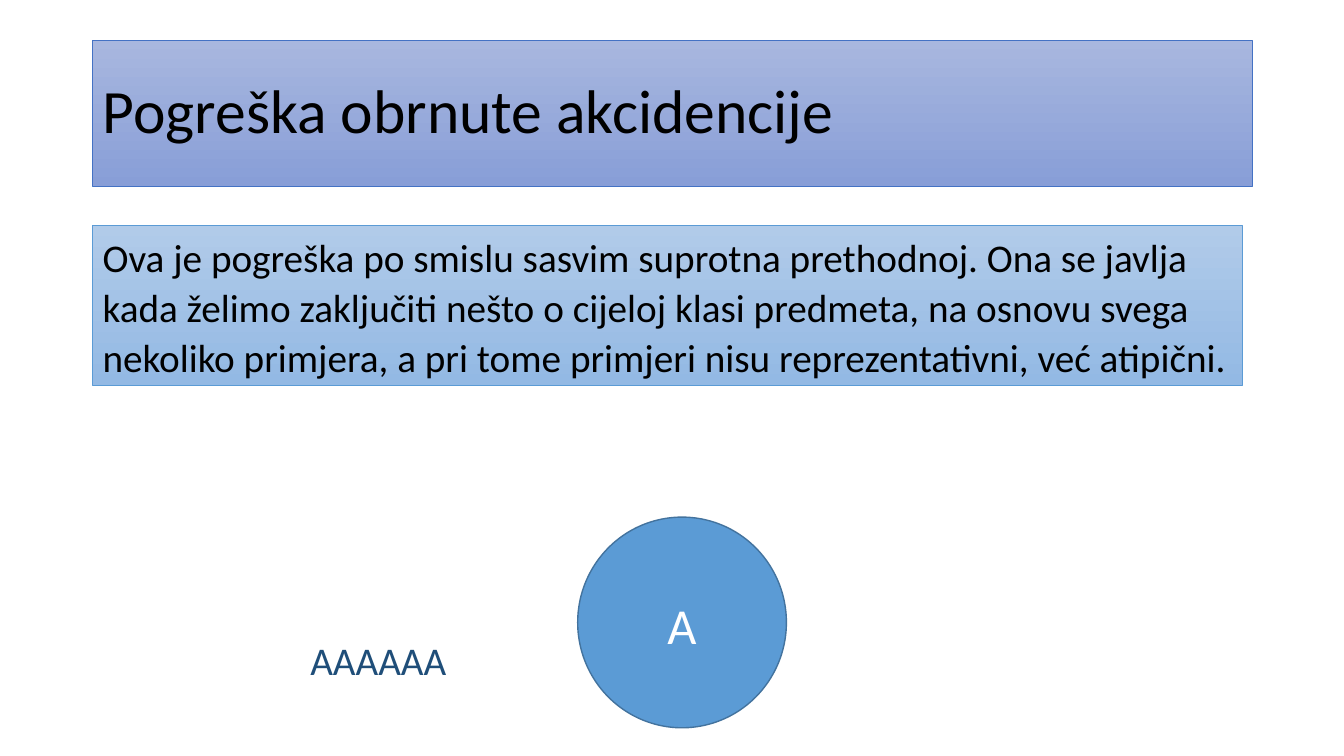
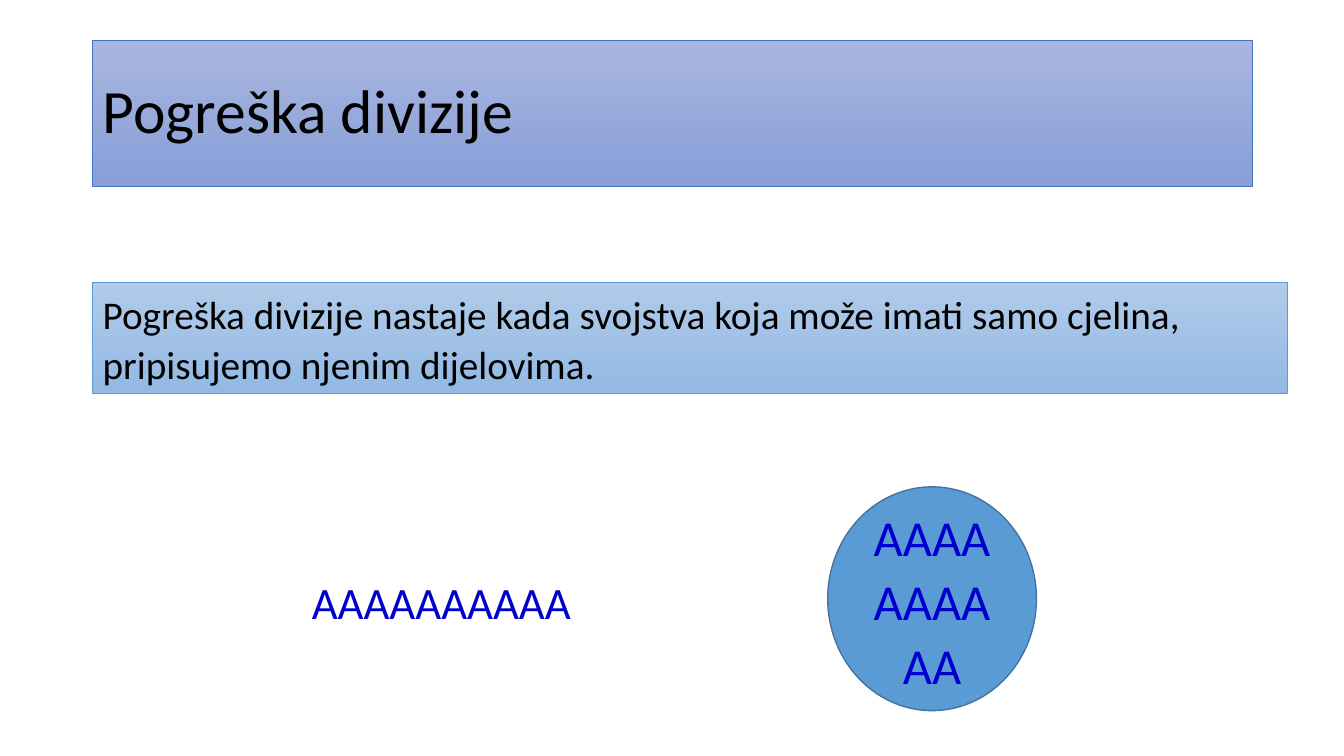
from pptx import Presentation
from pptx.dml.color import RGBColor as RGB
from pptx.enum.shapes import MSO_SHAPE as Shape
from pptx.enum.text import MSO_ANCHOR as Anchor, MSO_AUTO_SIZE as Auto, PP_ALIGN as Align
from pptx.util import Inches, Pt

FONT = "Calibri"
BLACK = RGB(0x00, 0x00, 0x00)
WHITE = RGB(0xFF, 0xFF, 0xFF)
NAVY = RGB(0x1F, 0x4E, 0x79)
INK = RGB(0x00, 0x00, 0xCC)
BLUE = RGB(0x5B, 0x9B, 0xD5)
EDGE = RGB(0x43, 0x73, 0x9E)
TITLE_EDGE = RGB(0x44, 0x72, 0xC4)
TITLE_FADE = RGB(0xA8, 0xB7, 0xDF), RGB(0x88, 0x9E, 0xD7)
BODY_FADE = RGB(0xB1, 0xCB, 0xE9), RGB(0x93, 0xB9, 0xE4)
LEFT = 0.92


def place(shape, left, top, width, height):
    shape.left, shape.top = Inches(left), Inches(top)
    shape.width, shape.height = Inches(width), Inches(height)


def outline(shape, color, width):
    shape.line.color.rgb = color
    shape.line.width = Pt(width)


def fade(shape, colors, edge):
    shape.fill.gradient()
    shape.fill.gradient_angle = 270
    for stop, color in zip(shape.fill.gradient_stops, colors):
        stop.color.rgb = color
    outline(shape, edge, 0.5)


def write(shape, text, size, color, align=Align.LEFT, anchor=Anchor.TOP,
          spacing=1.06, wrap=True):
    frame = shape.text_frame
    frame.text = text
    frame.word_wrap = wrap
    frame.auto_size = Auto.NONE
    frame.vertical_anchor = anchor
    para = frame.paragraphs[0]
    para.alignment = align
    para.line_spacing = spacing
    para.font.name = FONT
    para.font.size = Pt(size)
    para.font.color.rgb = color


def add_page(deck, text):
    slide = deck.slides.add_slide(deck.slide_layouts[5])
    title = slide.shapes.title
    place(title, LEFT, 0.4, 11.5, 1.45)
    fade(title, TITLE_FADE, TITLE_EDGE)
    write(title, text, 44, BLACK, anchor=Anchor.MIDDLE, spacing=0.9)
    return slide


def add_form(slide, kind, box):
    shape = slide.shapes.add_shape(kind, *map(Inches, box))
    shape.shadow.inherit = False
    return shape


def add_body(slide, text, top, width, height):
    body = add_form(slide, Shape.RECTANGLE, (LEFT, top, width, height))
    fade(body, BODY_FADE, BLUE)
    write(body, text, 28, BLACK)


def add_disc(slide, text, box, color):
    disc = add_form(slide, Shape.OVAL, box)
    disc.fill.solid()
    disc.fill.fore_color.rgb = BLUE
    outline(disc, EDGE, 1)
    write(disc, text, 36, color, Align.CENTER, Anchor.MIDDLE)


def add_label(slide, text, box, size, color, **style):
    label = slide.shapes.add_textbox(*map(Inches, box))
    write(label, text, size, color, **style)


def main():
    deck = Presentation()
    deck.slide_width, deck.slide_height = Inches(13.33), Inches(7.5)

    slide = add_page(deck, "Pogreška obrnute akcidencije")
    add_body(slide, "Ova je pogreška po smislu sasvim suprotna prethodnoj. "
             "Ona se javlja kada želimo zaključiti nešto o cijeloj klasi predmeta, "
             "na osnovu svega nekoliko primjera, a pri tome primjeri nisu "
             "reprezentativni, već atipični.", 2.24, 11.4, 1.58)
    add_disc(slide, "A", (5.73, 5.13, 2.07, 2.09), WHITE)
    add_label(slide, "AAAAAA", (2.98, 6.24, 1.57, 0.58), 28, NAVY)

    slide = add_page(deck, "Pogreška divizije")
    add_body(slide, "Pogreška divizije nastaje kada svojstva koja može imati samo "
             "cjelina, pripisujemo njenim dijelovima.", 2.8, 11.85, 1.1)
    add_disc(slide, "A" * 10, (8.21, 4.83, 2.07, 2.22), INK)
    add_label(slide, "A" * 10, (2.98, 5.62, 2.8, 0.65), 32, INK,
              align=Align.CENTER, wrap=False)

    deck.save("out.pptx")


if __name__ == "__main__":
    main()
